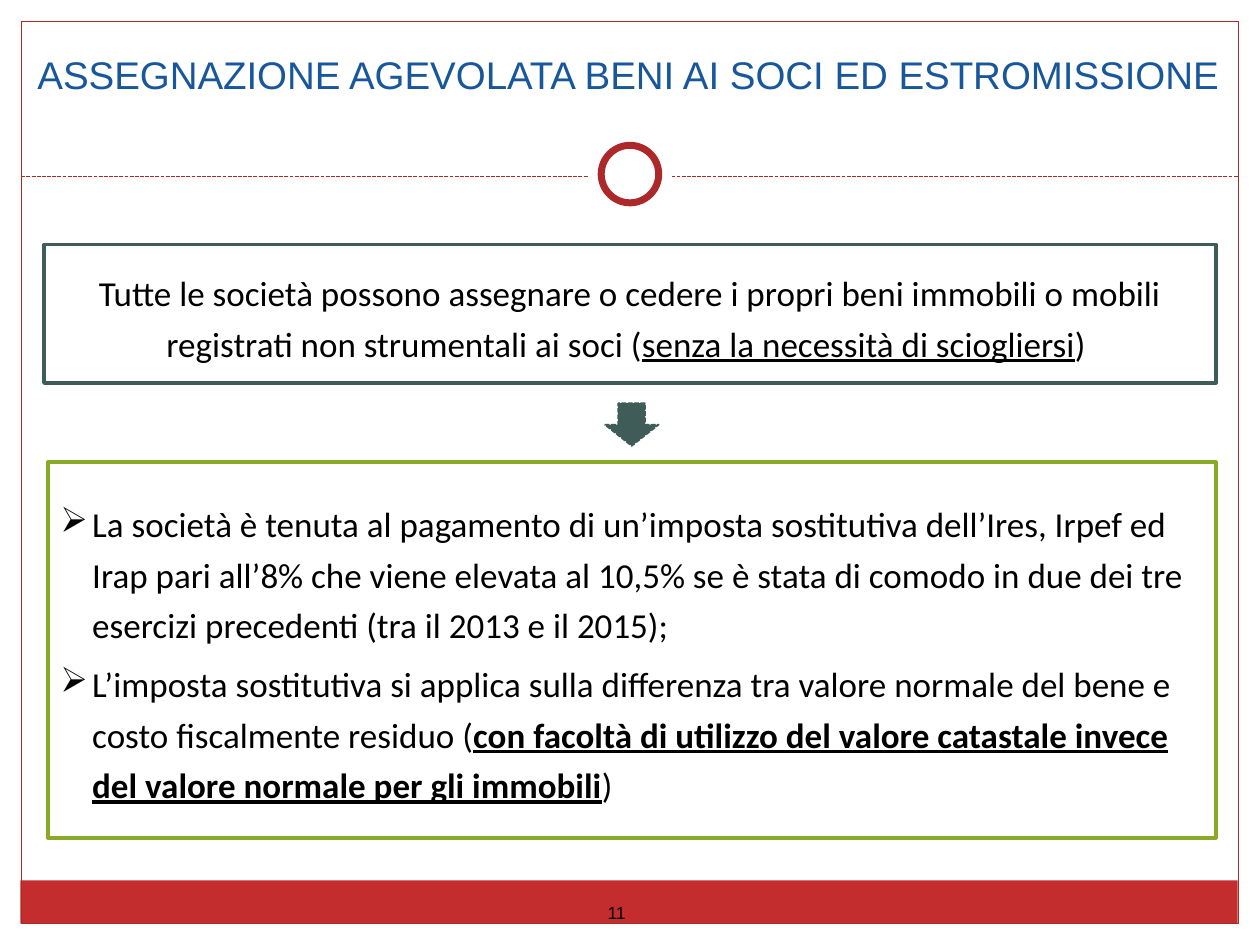
"""Build the slide on the assisted assignment of company assets to shareholders."""
from dataclasses import dataclass
from typing import Optional

from lxml import etree
from pptx import Presentation
from pptx.dml.color import RGBColor
from pptx.enum.dml import MSO_LINE
from pptx.enum.shapes import MSO_CONNECTOR, MSO_SHAPE
from pptx.enum.text import MSO_ANCHOR, MSO_AUTO_SIZE, PP_ALIGN
from pptx.oxml.ns import qn
from pptx.util import Cm, Pt

RECT, OVAL, ARROW = MSO_SHAPE.RECTANGLE, MSO_SHAPE.OVAL, MSO_SHAPE.DOWN_ARROW
TOP, MIDDLE = MSO_ANCHOR.TOP, MSO_ANCHOR.MIDDLE
LEFT, CENTER = PP_ALIGN.LEFT, PP_ALIGN.CENTER
DASH = MSO_LINE.SQUARE_DOT
STRAIGHT = MSO_CONNECTOR.STRAIGHT
NO_AUTOFIT = MSO_AUTO_SIZE.NONE

COLORS = {
    "white": "FFFFFF",
    "black": "000000",
    "band": "C32D2E",
    "frame": "AC2829",
    "slate": "405C58",
    "green": "89A927",
    "title": "18579B",
}


@dataclass
class Box:
    """A preset shape with its place in centimetres and its colours."""
    kind: int
    left: float
    top: float
    width: float
    height: float
    fill: Optional[str] = None
    line: Optional[str] = None
    weight: float = 0.75
    dash: Optional[int] = None


@dataclass
class Span:
    """A piece of text with its emphasis."""
    text: str
    bold: bool = False
    underline: bool = False


DECORATION = [
    Box(RECT, 0.41, 17.75, 24.54, 0.87, fill="band"),
    Box(RECT, 0.43, 0.43, 24.54, 18.19, line="frame"),
]
RINGS = [
    Box(OVAL, 11.85, 2.66, 1.7, 1.7, fill="white"),
    Box(OVAL, 12.12, 2.93, 1.16, 1.16, fill="white", line="frame", weight=4),
]
RULE_BOX = Box(RECT, 0.89, 4.93, 23.62, 2.79, line="slate", weight=2.25)
TAX_BOX = Box(RECT, 0.97, 9.32, 23.54, 7.57, line="green", weight=2.25)
DOWN = Box(ARROW, 12.19, 8.13, 1.09, 0.86, fill="slate", line="slate", weight=0.9, dash=DASH)

TITLE = [[Span("ASSEGNAZIONE AGEVOLATA BENI AI SOCI ED ESTROMISSIONE")]]
RULE = [[
    Span("Tutte le società possono assegnare o cedere i propri beni immobili o mobili "
         "registrati non strumentali ai soci ("),
    Span("senza la necessità di sciogliersi", underline=True),
    Span(") "),
]]
TAX = [
    [Span("La società è tenuta al pagamento di un’imposta sostitutiva dell’Ires, Irpef ed "
          "Irap pari all’8% che viene elevata al 10,5% se è stata di comodo in due dei tre "
          "esercizi precedenti (tra il 2013 e il 2015);")],
    [Span("L’imposta sostitutiva si applica sulla differenza tra valore normale del bene e "
          "costo fiscalmente residuo ("),
     Span("con facoltà di utilizzo del valore catastale invece del valore normale "
          "per gli immobili", bold=True, underline=True),
     Span(")")],
]


def rgb(name: str) -> RGBColor:
    """Return the named colour."""
    return RGBColor.from_string(COLORS[name])


def add_box(s, box: Box):
    """Draw a preset shape."""
    sp = s.shapes.add_shape(box.kind, Cm(box.left), Cm(box.top), Cm(box.width), Cm(box.height))
    sp.shadow.inherit = False
    if box.fill:
        sp.fill.solid()
        sp.fill.fore_color.rgb = rgb(box.fill)
    else:
        sp.fill.background()
    if box.line:
        sp.line.color.rgb = rgb(box.line)
        sp.line.width = Pt(box.weight)
        if box.dash:
            sp.line.dash_style = box.dash
    else:
        sp.line.fill.background()
    return sp


def add_divider(s, left: float, right: float, y: float) -> None:
    """Draw the dashed rule under the title."""
    cxn = s.shapes.add_connector(STRAIGHT, Cm(left), Cm(y), Cm(right), Cm(y))
    cxn.line.color.rgb = rgb("frame")
    cxn.line.width = Pt(0.75)
    cxn.line.dash_style = DASH
    etree.SubElement(cxn._element.spPr, qn("a:effectLst"))


def add_bullet(p, char: str, indent: float) -> None:
    """Give a paragraph a hanging bullet."""
    pPr = p._p.get_or_add_pPr()
    pPr.set("marL", str(Cm(indent)))
    pPr.set("indent", str(-Cm(indent)))
    etree.SubElement(pPr, qn("a:buChar")).set("char", char)


def write(sp, paragraphs: list[list[Span]], *, size: float, font: str = "Calibri",
          color: str = "black", align: int = LEFT, anchor: int = MIDDLE,
          spacing: float = 1.0, gap: float = 0, bullet: str = "") -> None:
    """Fill a shape with formatted paragraphs."""
    tf = sp.text_frame
    tf.auto_size = NO_AUTOFIT
    tf.word_wrap = True
    tf.vertical_anchor = anchor
    for i, spans in enumerate(paragraphs):
        p = tf.paragraphs[0] if i == 0 else tf.add_paragraph()
        p.alignment = align
        p.line_spacing = spacing
        p.space_before = Pt(gap if i else 0)
        if bullet:
            add_bullet(p, bullet, 0.64)
        for span in spans:
            r = p.add_run()
            r.text = span.text
            r.font.name = font
            r.font.size = Pt(size)
            r.font.bold = span.bold
            r.font.underline = span.underline
            r.font.color.rgb = rgb(color)


def main() -> None:
    """Build and save the slide."""
    prs = Presentation()
    prs.slide_width, prs.slide_height = Cm(25.4), Cm(19.05)
    s = prs.slides.add_slide(prs.slide_layouts[5])

    title = s.shapes.title
    title.left, title.top, title.width, title.height = Cm(0.5), Cm(0.91), Cm(24.45), Cm(1.4)
    write(title, TITLE, size=22, font="Arial", color="title", anchor=TOP)

    for box in DECORATION:
        add_box(s, box)
    add_divider(s, 0.43, 24.97, 3.56)
    for box in RINGS:
        add_box(s, box)

    write(add_box(s, RULE_BOX), RULE, size=20, align=CENTER, spacing=1.2)
    write(add_box(s, TAX_BOX), TAX, size=20, spacing=1.2, gap=5, bullet="➢")
    add_box(s, DOWN)

    number = s.shapes.add_textbox(Cm(11.91), Cm(18.06), Cm(1.04), Cm(0.66))
    write(number, [[Span("11")]], size=10, font="Arial", align=CENTER)
    prs.save("out.pptx")


if __name__ == "__main__":
    main()
